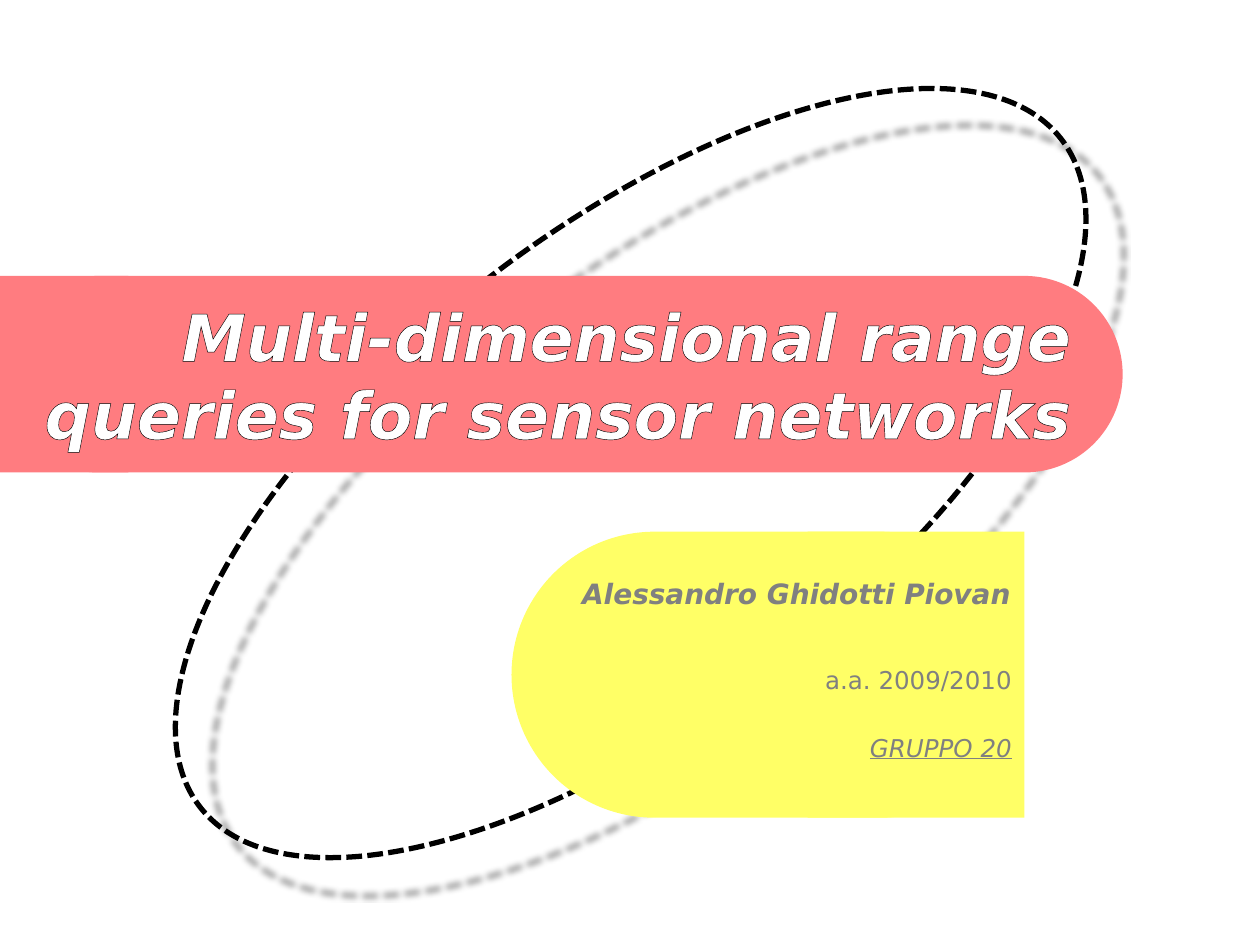
from dataclasses import dataclass
from lxml.etree import SubElement
from pptx import Presentation
from pptx.dml.color import RGBColor
from pptx.enum.dml import MSO_LINE as Dash
from pptx.enum.shapes import MSO_SHAPE as Kind
from pptx.enum.text import MSO_ANCHOR as Anchor, MSO_AUTO_SIZE as Fit, PP_ALIGN as Align
from pptx.oxml import parse_xml
from pptx.oxml.ns import nsdecls, qn
from pptx.util import Inches, Pt

FONT = "DejaVu Sans"
GREY = "808080"


@dataclass
class Box:
    left: float
    top: float
    width: float
    height: float

    def spans(self) -> list:
        return [Inches(v) for v in (self.left, self.top, self.width, self.height)]


@dataclass
class Band:
    """A bar with one round end, made of a pill and a square cap."""
    pill: Box
    cap: Box
    color: str


@dataclass
class Line:
    text: str
    size: float
    color: str = GREY
    bold: bool = False
    italic: bool = False
    underline: bool = False
    before: float = 0


def paint(target, color: str) -> None:
    target.solid()
    target.fore_color.rgb = RGBColor.from_string(color)


def add_band(shapes, band: Band) -> None:
    group = shapes.add_group_shape()
    for kind, box in ((Kind.RECTANGLE, band.cap), (Kind.ROUNDED_RECTANGLE, band.pill)):
        part = group.shapes.add_shape(kind, *box.spans())
        part.shadow.inherit = False
        paint(part.fill, band.color)
        part.line.fill.background()
        if kind == Kind.ROUNDED_RECTANGLE:
            part.adjustments[0] = 0.5


def write(shape, lines: list[Line], anchor=Anchor.TOP) -> None:
    frame = shape.text_frame
    frame.word_wrap = True
    frame.auto_size = Fit.NONE
    frame.vertical_anchor = anchor
    for i, line in enumerate(lines):
        para = frame.add_paragraph() if i else frame.paragraphs[0]
        para.alignment = Align.RIGHT
        para.space_before = Pt(line.before)
        run = para.add_run()
        run.text = line.text
        looks = {"name": FONT, "size": Pt(line.size), "bold": line.bold,
                 "italic": line.italic, "underline": line.underline}
        for key, value in looks.items():
            setattr(run.font, key, value)
        paint(run.font.fill, line.color)


def add_orbit(shapes, box: Box, turn: float) -> None:
    orbit = shapes.add_shape(Kind.OVAL, *box.spans())
    orbit.rotation = turn
    orbit.fill.background()
    paint(orbit.line.fill, "000000")
    orbit.line.width = Pt(3)
    orbit.line.dash_style = Dash.SQUARE_DOT
    # Soft shadow, down and to the right
    orbit.shadow.inherit = False
    effects = orbit._element.spPr.find(qn("a:effectLst"))
    shade = SubElement(effects, qn("a:outerShdw"), blurRad=str(Pt(3)),
                       dist=str(Pt(30)), dir=str(45 * 60000), algn="ctr", rotWithShape="0")
    tint = SubElement(shade, qn("a:srgbClr"), val="000000")
    SubElement(tint, qn("a:alpha"), val="40000")


def outline(run, color: str, width: float) -> None:
    edge = parse_xml(f'<a:ln {nsdecls("a")} w="{Pt(width)}"><a:solidFill>'
                     f'<a:srgbClr val="{color}"/></a:solidFill></a:ln>')
    run.font._element.insert(0, edge)


def main() -> None:
    deck = Presentation()
    deck.slide_width, deck.slide_height = Inches(10), Inches(7.5)
    slide = deck.slides.add_slide(deck.slide_layouts[5])
    shapes = slide.shapes

    # Background shapes
    add_orbit(shapes, Box(3.09, -0.57, 3.83, 8.65), 52.2)
    for band in (
        Band(Box(0, 2.19, 8.91, 1.56), Box(0, 2.19, 1.02, 1.56), "FF7C80"),
        Band(Box(4.06, 4.22, 4.06, 2.27), Box(6.41, 4.22, 1.72, 2.27), "FFFF66"),
    ):
        add_band(shapes, band)

    # Year and group
    term = shapes.add_textbox(*Box(4.69, 5.23, 3.44, 0.94).spans())
    write(term, [Line("a.a. 2009/2010", 14, before=2.8),
                 Line("GRUPPO 20", 14, italic=True, underline=True, before=22)])

    # Title, raised above the red band
    title = shapes.title
    title.left, title.top, title.width, title.height = Box(0.16, 2.19, 8.44, 1.56).spans()
    write(title, [Line("Multi-dimensional range queries for sensor networks", 37,
                       "FFFFFF", bold=True, italic=True)], Anchor.MIDDLE)
    outline(title.text_frame.paragraphs[0].runs[0], "000000", 0.75)
    shapes._spTree.append(title._element)

    # Author
    author = shapes.add_textbox(*Box(4.45, 4.53, 3.67, 0.37).spans())
    write(author, [Line("Alessandro Ghidotti Piovan", 16, bold=True, italic=True)])

    deck.save("out.pptx")


if __name__ == "__main__":
    main()
